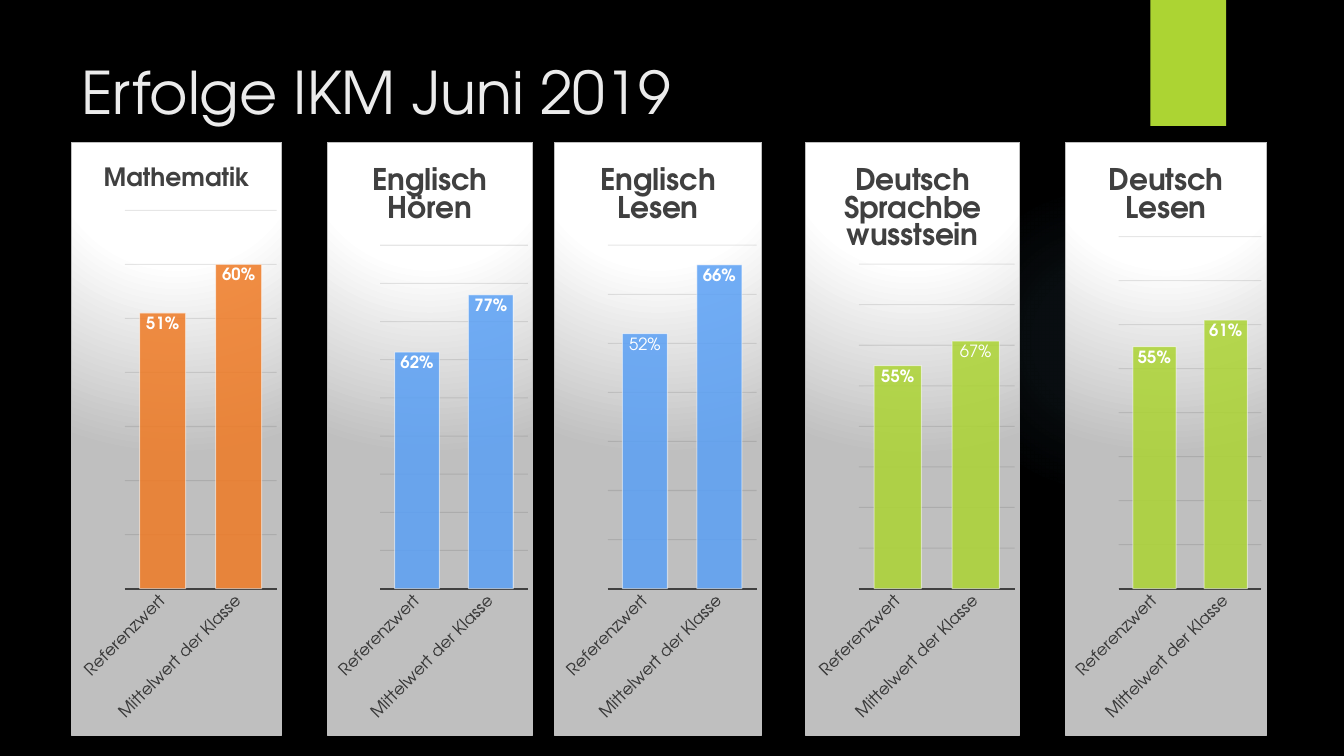
import pptx
import pptx.chart.data
import pptx.dml.color
import pptx.enum.chart
import pptx.enum.shapes
import pptx.oxml
import pptx.oxml.ns
import pptx.util

Pt = pptx.util.Pt
qn = pptx.oxml.ns.qn
rgb = pptx.dml.color.RGBColor.from_string
FONT = "TeX Gyre Adventor"


def fade(element, *percents):
    """Set the opacity of the colours in an element, in order."""
    for clr, percent in zip(element.iter(qn("a:srgbClr")), percents):
        clr.append(pptx.oxml.parse_xml(
            f'<a:alpha {pptx.oxml.ns.nsdecls("a")} val="{percent * 1000}"/>'))


def radial(stops, top, bottom):
    """Build a circular gradient from (position, colour, opacity) stops."""
    gs = "".join(
        f'<a:gs pos="{pos * 1000}"><a:srgbClr val="{color}">'
        f'<a:alpha val="{opacity * 1000}"/></a:srgbClr></a:gs>'
        for pos, color, opacity in stops)
    return pptx.oxml.parse_xml(
        f'<a:gradFill {pptx.oxml.ns.nsdecls("a")} rotWithShape="1"><a:gsLst>{gs}</a:gsLst>'
        f'<a:path path="circle"><a:fillToRect l="50000" t="{top * 1000}" '
        f'r="50000" b="{bottom * 1000}"/></a:path></a:gradFill>')


prs = pptx.Presentation()
prs.slide_width, prs.slide_height = Pt(960), Pt(540)
s = prs.slides.add_slide(prs.slide_layouts[6])
s.background.fill.solid()
s.background.fill.fore_color.rgb = rgb("000000")

# Background glow
glow = s.shapes.add_shape(pptx.enum.shapes.MSO_SHAPE.OVAL,
                          Pt(677.5), Pt(131.8), Pt(221.8), Pt(221.8))
glow.shadow.inherit = False
glow.line.fill.background()
glow_stops = [(0, "7AC4F0", 7), (36, "7AC4F0", 6), (69, "7AC4F0", 0)]
glow.element.spPr.find(qn("a:prstGeom")).addnext(radial(glow_stops, 50, 50))

# Green tab
tab = s.shapes.add_shape(pptx.enum.shapes.MSO_SHAPE.RECTANGLE,
                         Pt(821.8), 0, Pt(54), Pt(90))
tab.shadow.inherit = False
tab.line.fill.background()
tab.fill.solid()
tab.fill.fore_color.rgb = rgb("ACD433")

# Title
tf = s.shapes.add_textbox(Pt(51), Pt(36), Pt(741), Pt(110)).text_frame
tf.word_wrap = True
r = tf.paragraphs[0].add_run()
r.text = "Erfolge IKM Juni 2019"
r.font.name, r.font.size = FONT, Pt(42)
r.font.color.rgb = rgb("EBEBEB")

# Charts: title, title size, left, width, plot top, axis maximum, colour,
# values, plain labels by point
TOP, HEIGHT, BASELINE = 101.5, 424, 420.7
PLOT_LEFT, PLOT_RIGHT = 38, 3.5
subjects = [
    ("Mathematik", 18, 51, 150.5, 150, 0.7, "EF7A24", (0.51, 0.6), {}),
    ("Englisch Hören", 21.3, 233.3, 147.6, 175, 0.9, "5AA0F5", (0.62, 0.77), {}),
    ("Englisch Lesen", 21.3, 396, 148.3, 175, 0.7, "5AA0F5", (0.52, 0.66), {0: "52%"}),
    ("Deutsch Sprachbewusstsein", 21.3, 575.3, 153.4, 188.5, 0.8, "ACD433",
     (0.55, 0.61), {1: "67%"}),
    ("Deutsch Lesen", 21.3, 761, 144, 168.8, 0.8, "ACD433", (0.55, 0.61), {}),
]
panel_stops = [(0, "FFFFFF", 100), (39, "FFFFFF", 100), (100, "BFBFBF", 100)]
inside_end = pptx.enum.chart.XL_LABEL_POSITION.INSIDE_END

for title, size, left, width, plot_top, maximum, color, values, plain in subjects:
    data = pptx.chart.data.CategoryChartData(number_format="0%")
    data.categories = ["Referenzwert", "Mittelwert der Klasse"]
    data.add_series("Series 1", values)
    chart = s.shapes.add_chart(pptx.enum.chart.XL_CHART_TYPE.COLUMN_CLUSTERED,
                               Pt(left), Pt(TOP), Pt(width), Pt(HEIGHT), data).chart
    chart.has_legend = False
    chart.font.name, chart.font.size = FONT, Pt(10)
    chart.font.color.rgb = rgb("FFFFFF")

    # Panel background
    panel = pptx.oxml.parse_xml(
        f'<c:spPr {pptx.oxml.ns.nsdecls("c", "a")}><a:ln w="9525"><a:solidFill>'
        '<a:srgbClr val="BFBFBF"/></a:solidFill></a:ln></c:spPr>')
    panel.insert(0, radial(panel_stops, -80, 180))
    chart.element.find(qn("c:chart")).addnext(panel)

    # Chart title
    chart.has_title = True
    chart.chart_title.include_in_layout = False
    r = chart.chart_title.text_frame.paragraphs[0].add_run()
    r.text = title
    r.font.name, r.font.size, r.font.bold = FONT, Pt(size), True
    r.font.color.rgb = rgb("404040")

    # Plot area
    layout = {"x": PLOT_LEFT / width, "y": (plot_top - TOP) / HEIGHT,
              "w": (width - PLOT_LEFT - PLOT_RIGHT) / width,
              "h": (BASELINE - plot_top) / HEIGHT}
    plot_area = chart.element.find(".//" + qn("c:plotArea"))
    for old in plot_area.findall(qn("c:layout")):
        plot_area.remove(old)
    plot_area.insert(0, pptx.oxml.parse_xml(
        f'<c:layout {pptx.oxml.ns.nsdecls("c")}><c:manualLayout>'
        '<c:layoutTarget val="inner"/><c:xMode val="edge"/><c:yMode val="edge"/>'
        + "".join(f'<c:{key} val="{part:.4f}"/>' for key, part in layout.items())
        + "</c:manualLayout></c:layout>"))

    # Axes
    axis = chart.value_axis
    axis.minimum_scale, axis.maximum_scale, axis.major_unit = 0, maximum, 0.1
    axis.visible = False
    grid = axis.major_gridlines.format.line
    grid.width = Pt(0.75)
    grid.color.rgb = rgb("0D0D0D")
    fade(plot_area.find(".//" + qn("c:majorGridlines")), 10)
    axis = chart.category_axis
    axis.major_tick_mark = pptx.enum.chart.XL_TICK_MARK.NONE
    axis.format.line.width = Pt(1.5)
    axis.format.line.color.rgb = rgb("404040")
    font = axis.tick_labels.font
    font.name, font.size = FONT, Pt(12)
    font.color.rgb = rgb("404040")
    plot_area.find(qn("c:catAx")).find(".//" + qn("a:bodyPr")).set("rot", "-2700000")

    # Columns
    plot = chart.plots[0]
    plot.gap_width, plot.vary_by_categories = 65, False
    series = plot.series[0]
    series.format.fill.solid()
    series.format.fill.fore_color.rgb = rgb(color)
    series.format.line.width = Pt(0.75)
    series.format.line.color.rgb = rgb("FFFFFF")
    fade(plot_area.find(".//" + qn("c:ser")).find(qn("c:spPr")), 85, 50)

    # Value labels
    labels = series.data_labels
    labels.show_value, labels.position = True, inside_end
    labels.number_format, labels.number_format_is_linked = "0%", False
    labels.font.name, labels.font.size, labels.font.bold = FONT, Pt(12), True
    labels.font.color.rgb = rgb("FFFFFF")
    for index, text in plain.items():
        label = series.points[index].data_label
        r = label.text_frame.paragraphs[0].add_run()
        r.text = text
        r.font.name, r.font.size, r.font.bold = FONT, Pt(12), False
        r.font.color.rgb = rgb("FFFFFF")
        label.position = inside_end

prs.save("out.pptx")
